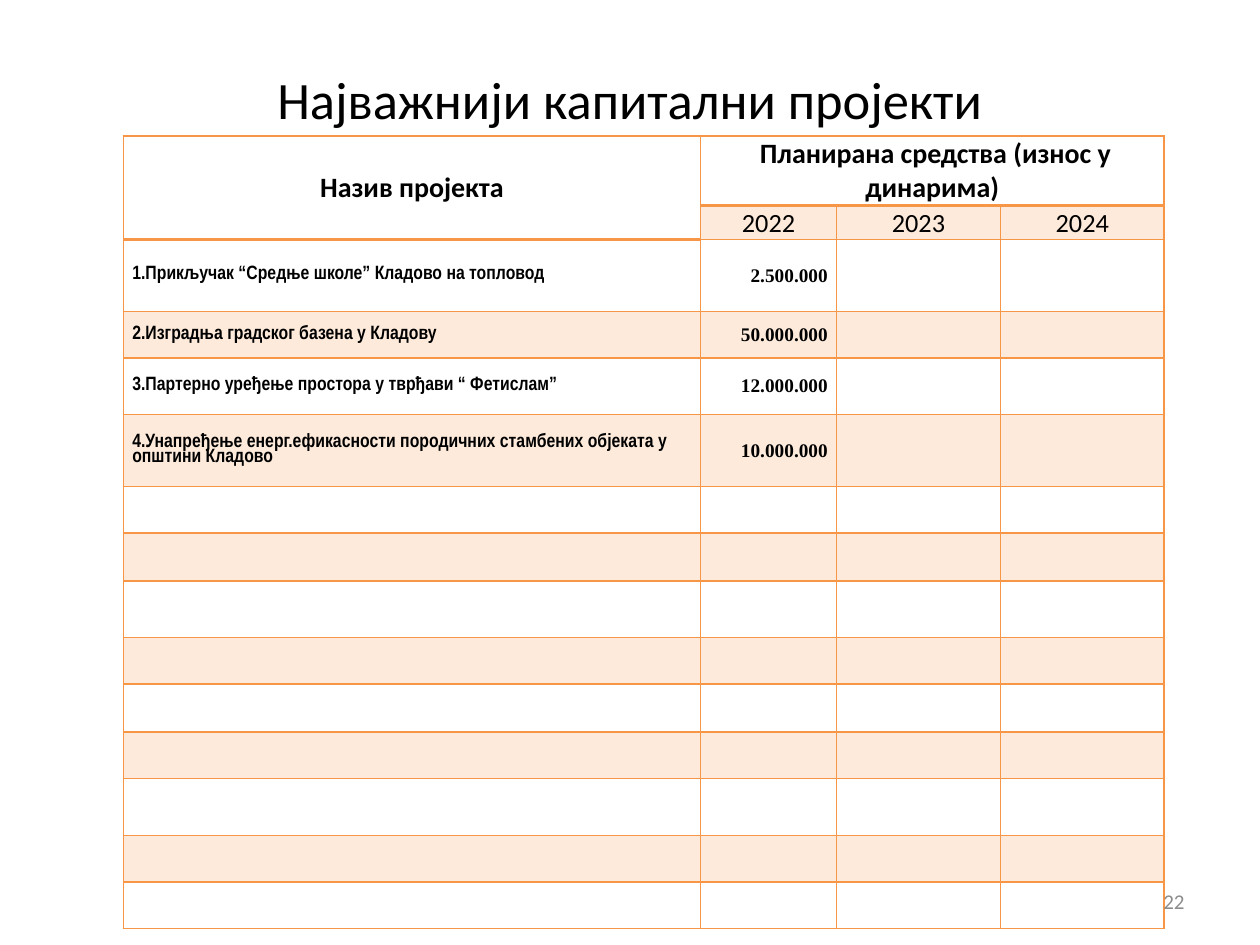
import lxml.etree
import pptx
import pptx.dml.color
import pptx.enum.text
import pptx.oxml.ns
import pptx.util
from pptx.util import Inches

ALIGN = pptx.enum.text.PP_ALIGN
ANCHOR = pptx.enum.text.MSO_ANCHOR


class Theme:
    ink = "000000"
    accent = "F79646"
    band = "FDEADA"
    muted = "8C8C8C"
    body_font = "Calibri"
    project_font = "Arial Narrow"
    amount_font = "Times New Roman"
    title_size = 30
    header_size = 16
    year_size = 15
    project_size = 11
    number_size = 12


def write(text_frame, text, align, size, font=Theme.body_font, bold=False, color=Theme.ink):
    text_frame.text = text
    text_frame.word_wrap = True
    paragraph = text_frame.paragraphs[0]
    paragraph.alignment = align
    run_font = paragraph.runs[0].font
    run_font.size = pptx.util.Pt(size)
    run_font.name = font
    run_font.bold = bold
    run_font.color.rgb = pptx.dml.color.RGBColor.from_string(color)


def add_border(cell, side, width):
    properties = cell._tc.get_or_add_tcPr()
    line = lxml.etree.SubElement(properties, pptx.oxml.ns.qn("a:ln" + side),
                                 w=str(pptx.util.Pt(width)))
    fill = lxml.etree.SubElement(line, pptx.oxml.ns.qn("a:solidFill"))
    lxml.etree.SubElement(fill, pptx.oxml.ns.qn("a:srgbClr"), val=Theme.accent)


presentation = pptx.Presentation()
presentation.slide_width = Inches(10)
presentation.slide_height = Inches(7.5)
slide = presentation.slides.add_slide(presentation.slide_layouts[6])

# Table grid
column_widths = [4.58, 1.08, 1.3, 1.3]
row_heights = [0.55, 0.24, 0.57, 0.37, 0.45, 0.57, 0.37, 0.38,
               0.45, 0.37, 0.38, 0.37, 0.45, 0.37, 0.37]
table = slide.shapes.add_table(
    len(row_heights), len(column_widths), Inches(0.98), Inches(1.08),
    Inches(sum(column_widths)), Inches(sum(row_heights))).table
table.first_row = False
table.horz_banding = False
for column, width in zip(table.columns, column_widths):
    column.width = Inches(width)
for row, height in zip(table.rows, row_heights):
    row.height = Inches(height)

# Cell borders, margins and banding on every odd row
for row_index, row in enumerate(table.rows):
    for column_index, cell in enumerate(row.cells):
        cell.margin_left = cell.margin_right = Inches(0.07)
        cell.margin_top = cell.margin_bottom = 0
        cell.vertical_anchor = ANCHOR.MIDDLE
        header_end = 1 if column_index == 0 else 0
        add_border(cell, "L", 1)
        add_border(cell, "R", 1)
        add_border(cell, "T", 2 if row_index == header_end + 1 else 1)
        add_border(cell, "B", 2 if row_index == header_end else 1)
        if row_index % 2 and (row_index, column_index) != (1, 0):
            cell.fill.solid()
            cell.fill.fore_color.rgb = pptx.dml.color.RGBColor.from_string(Theme.band)
        else:
            cell.fill.background()

# Table header
table.cell(0, 0).merge(table.cell(1, 0))
table.cell(0, 1).merge(table.cell(0, 3))
write(table.cell(0, 0).text_frame, "Назив пројекта", ALIGN.CENTER,
      Theme.header_size, bold=True)
write(table.cell(0, 1).text_frame, " Планирана средства (износ у динарима)",
      ALIGN.CENTER, Theme.header_size, bold=True)
table.cell(0, 1).vertical_anchor = ANCHOR.BOTTOM
for column_index, year in enumerate(["2022", "2023", "2024"], start=1):
    cell = table.cell(1, column_index)
    write(cell.text_frame, year, ALIGN.CENTER, Theme.year_size)
    cell.vertical_anchor = ANCHOR.BOTTOM

# Projects and planned amounts
projects = [
    ("1.Прикључак “Средње школе” Кладово на топловод", "2.500.000"),
    ("2.Изградња градског базена у Кладову", "50.000.000"),
    ("3.Партерно уређење простора у тврђави “ Фетислам”", "12.000.000"),
    ("4.Унапређење енерг.ефикасности породичних стамбених објеката у општини Кладово",
     "10.000.000"),
]
for row_index, (project, amount) in enumerate(projects, start=2):
    project_frame = table.cell(row_index, 0).text_frame
    write(project_frame, project, ALIGN.LEFT, Theme.project_size,
          Theme.project_font, bold=True)
    project_frame.paragraphs[0].line_spacing = 0.8
    write(table.cell(row_index, 1).text_frame, amount, ALIGN.RIGHT,
          Theme.project_size, Theme.amount_font, bold=True)

# Slide number and title
number_box = slide.shapes.add_textbox(Inches(7.17), Inches(6.95), Inches(2.33), Inches(0.4))
write(number_box.text_frame, "22", ALIGN.RIGHT, Theme.number_size, color=Theme.muted)
title_box = slide.shapes.add_textbox(Inches(0.5), Inches(0.3), Inches(9), Inches(0.96))
write(title_box.text_frame, "Најважнији капитални пројекти", ALIGN.CENTER, Theme.title_size)
for box in (number_box, title_box):
    box.text_frame.vertical_anchor = ANCHOR.MIDDLE

presentation.save("out.pptx")
